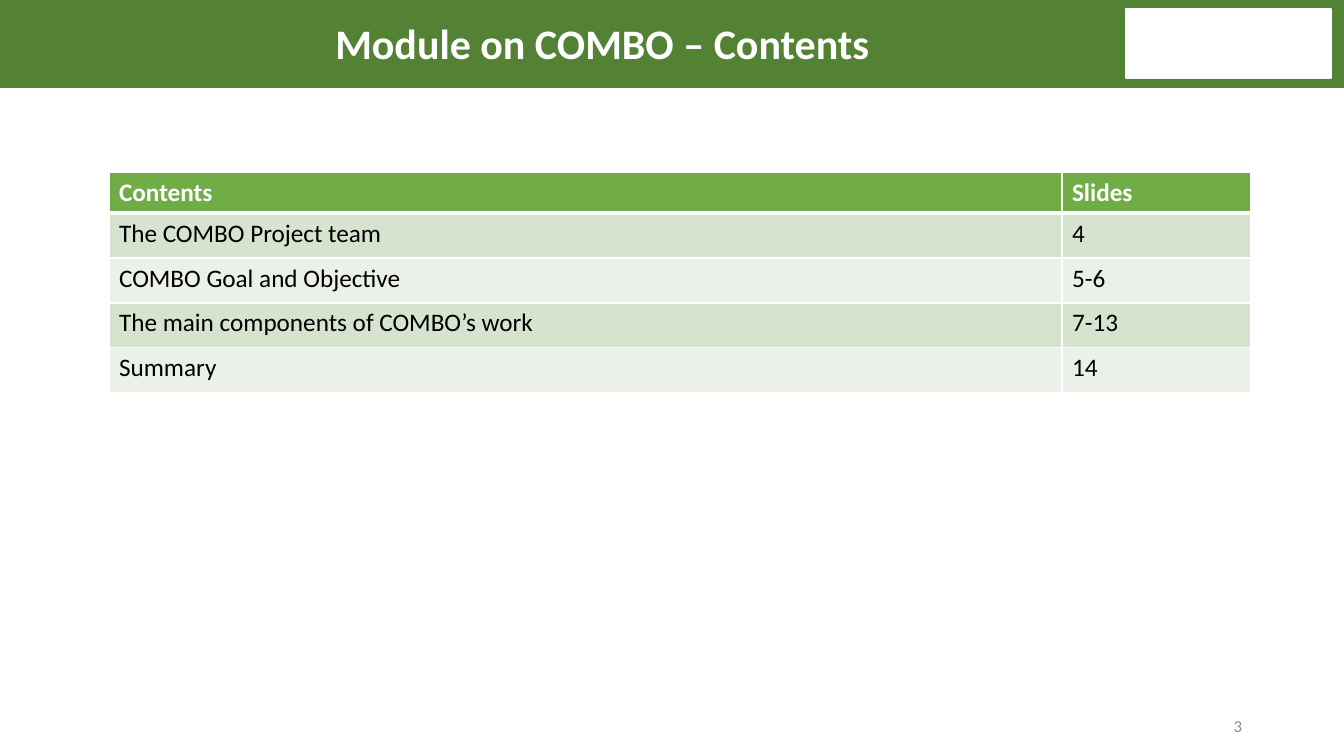
from lxml.etree import SubElement
from pptx import Presentation
from pptx.dml.color import RGBColor
from pptx.enum.shapes import MSO_SHAPE
from pptx.enum.text import MSO_ANCHOR, PP_ALIGN
from pptx.oxml.ns import qn
from pptx.util import Pt

HUES = {
    "white": "FFFFFF",
    "black": "000000",
    "band": "548235",
    "head": "70AD47",
    "odd": "D5E3CF",
    "even": "EBF1E9",
    "gray": "8C8C8C",
}
ROWS = [
    ("Contents", "Slides"),
    ("The COMBO Project team", "4"),
    ("COMBO Goal and Objective", "5-6"),
    ("The main components of COMBO’s work", "7-13"),
    ("Summary", "14"),
]


def px(size):
    return round(size * 12192000 / 1344)


def hue(name):
    return RGBColor.from_string(HUES[name])


def write(frame, text, size=18, color="black", bold=False, align=PP_ALIGN.LEFT, lead=None):
    para = frame.paragraphs[0]
    para.alignment = align
    para.line_spacing = lead
    run = para.add_run()
    run.text = text
    font = run.font
    font.name, font.size, font.bold = "Calibri", Pt(size), bold
    font.color.rgb = hue(color)


class Deck:
    """Holds the style and the current slide."""

    def __init__(self):
        self.show = Presentation()
        self.show.slide_width, self.show.slide_height = px(1344), px(756)
        self.slide = self.show.slides.add_slide(self.show.slide_layouts[6])

    def rect(self, box, color, line=None):
        shape = self.slide.shapes.add_shape(MSO_SHAPE.RECTANGLE, *map(px, box))
        shape.shadow.inherit = False
        shape.fill.solid()
        shape.fill.fore_color.rgb = hue(color)
        if line:
            shape.line.color.rgb = hue(line)
            shape.line.width = Pt(1)
        else:
            shape.line.fill.background()

    def text(self, box, text, **form):
        frame = self.slide.shapes.add_textbox(*map(px, box)).text_frame
        frame.word_wrap = True
        frame.vertical_anchor = MSO_ANCHOR.MIDDLE
        write(frame, text, **form)

    def edge(self, cell, side, width):
        line = SubElement(cell._tc.get_or_add_tcPr(), qn(f"a:ln{side}"), w=str(Pt(width)))
        fill = SubElement(line, qn("a:solidFill"))
        SubElement(fill, qn("a:srgbClr"), val=HUES["white"])

    def cell(self, cell, text, row):
        widths = {"L": 1, "R": 1, "T": 3 if row == 1 else 1, "B": 3 if row == 0 else 1}
        for side, width in widths.items():
            self.edge(cell, side, width)
        cell.fill.solid()
        cell.fill.fore_color.rgb = hue("head" if row == 0 else "odd" if row % 2 else "even")
        write(cell.text_frame, text, color="black" if row else "white", bold=row == 0)

    def table(self, left, top, wides, highs, rows):
        box = left, top, sum(wides), sum(highs)
        table = self.slide.shapes.add_table(len(rows), len(wides), *map(px, box)).table
        for col, wide in zip(table.columns, wides):
            col.width = px(wide)
        for row, high in enumerate(highs):
            table.rows[row].height = px(high)
            for col, text in enumerate(rows[row]):
                self.cell(table.cell(row, col), text, row)


def main():
    deck = Deck()
    deck.text((1163, 710, 89, 31), "3", size=12, color="gray", align=PP_ALIGN.RIGHT)
    deck.rect((0, -3, 1344, 91), "band")
    deck.rect((1126, 9, 205, 69), "white", line="white")
    deck.text((81, 0, 1043, 91), "Module on COMBO – Contents", size=30, color="white",
              bold=True, align=PP_ALIGN.CENTER, lead=0.9)
    deck.table(109, 172, [953, 189], [41] + [45] * 4, ROWS)
    deck.show.save("out.pptx")


if __name__ == "__main__":
    main()
